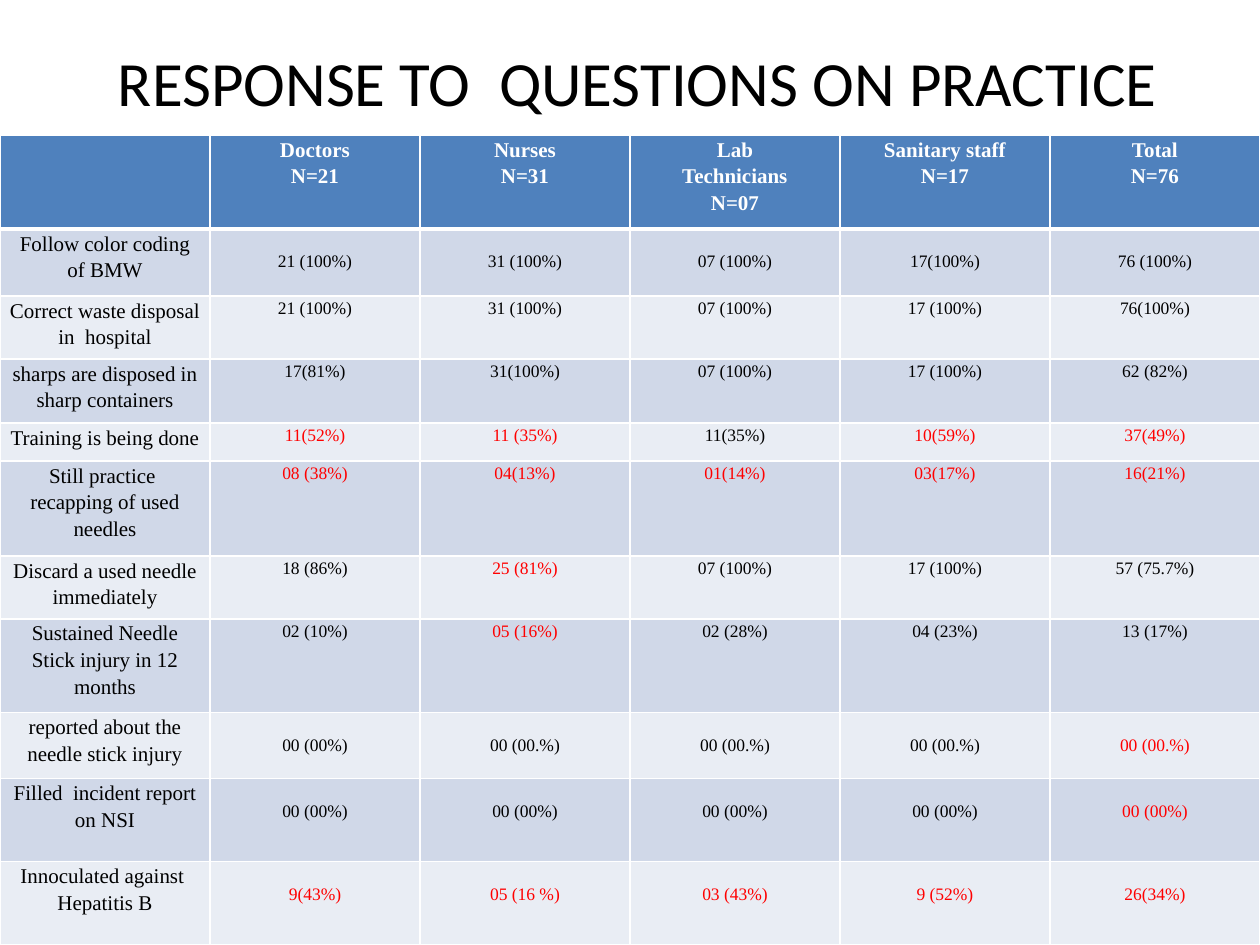
from lxml.etree import SubElement
from pptx import Presentation
from pptx.dml.color import RGBColor
from pptx.enum.text import MSO_ANCHOR, PP_ALIGN
from pptx.oxml.ns import qn
from pptx.util import Pt

PX = 914400 // 126
COLORS = {
    "header": "4F81BD",
    "odd": "D0D8E8",
    "even": "E9EDF4",
    "white": "FFFFFF",
    "black": "000000",
    "red": "FF0000",
}
SERIF = "Times New Roman"
TITLE = {"name": "Calibri", "size": Pt(36)}
HEADER = {"name": SERIF, "size": Pt(12), "bold": True}
QUESTION = {"name": SERIF, "size": Pt(12), "bold": False}
ANSWER = {"name": SERIF, "size": Pt(10), "bold": False}

COLUMN_WIDTH = 210
HEADER_HEIGHT = 94
LOWERED = 20  # top margin of answers that start one line down
GROUPS = ["", "Doctors\nN=21", "Nurses\nN=31", "Lab\nTechnicians\nN=07",
          "Sanitary staff\nN=17", "Total\nN=76"]
# height, top margin of answers, question, answers, columns with red answers
RESPONSES = [
    (67, LOWERED, "Follow color coding of BMW",
     ["21 (100%)", "31 (100%)", "07 (100%)", "17(100%)", "76 (100%)"], ()),
    (63, 0, "Correct waste disposal in  hospital",
     ["21 (100%)", "31 (100%)", "07 (100%)", "17 (100%)", "76(100%)"], ()),
    (64, 0, "sharps are disposed in sharp containers",
     ["17(81%)", "31(100%)", "07 (100%)", "17 (100%)", "62 (82%)"], ()),
    (38, 0, "Training is being done",
     ["11(52%)", "11 (35%)", "11(35%)", "10(59%)", "37(49%)"], (1, 2, 4, 5)),
    (95, 0, "Still practice  recapping of used needles",
     ["08 (38%)", "04(13%)", "01(14%)", "03(17%)", "16(21%)"], (1, 2, 3, 4, 5)),
    (63, 0, "Discard a used needle immediately",
     ["18 (86%)", "25 (81%)", "07 (100%)", "17 (100%)", "57 (75.7%)"], (2,)),
    (94, 0, "Sustained Needle Stick injury in 12 months",
     ["02 (10%)", "05 (16%)", "02 (28%)", "04 (23%)", "13 (17%)"], (2,)),
    (66, LOWERED, "reported about the needle stick injury",
     ["00 (00%)", "00 (00.%)", "00 (00.%)", "00 (00.%)", "00 (00.%)"], (5,)),
    (83, LOWERED, "Filled  incident report on NSI",
     ["00 (00%)"] * 5, (5,)),
    (83, LOWERED, "Innoculated against  Hepatitis B",
     ["9(43%)", "05 (16 %)", "03 (43%)", "9 (52%)", "26(34%)"], (1, 2, 3, 4, 5)),
]


def px(length):
    return length * PX


def rgb(color):
    return RGBColor.from_string(COLORS[color])


def write(frame, text, font, color, line_spacing=1.0):
    """Put each line of text in its own centred paragraph."""
    for index, line in enumerate(text.split("\n")):
        para = frame.add_paragraph() if index else frame.paragraphs[0]
        para.alignment = PP_ALIGN.CENTER
        para.line_spacing = line_spacing
        if not line:
            continue
        span = para.add_run()
        span.text = line
        for name, value in font.items():
            setattr(span.font, name, value)
        span.font.color.rgb = rgb(color)


def add_title(page, text):
    box = page.shapes.add_textbox(px(15), px(38), px(1245), px(87))
    frame = box.text_frame
    frame.word_wrap = True
    frame.vertical_anchor = MSO_ANCHOR.MIDDLE
    write(frame, text, TITLE, "black")


def add_borders(cell, widths):
    """Draw white borders; widths gives points by side tag."""
    properties = cell._tc.get_or_add_tcPr()
    for side, width in widths.items():
        line = SubElement(properties, qn(f"a:{side}"), w=str(Pt(width)))
        fill = SubElement(line, qn("a:solidFill"))
        SubElement(fill, qn("a:srgbClr"), val=COLORS["white"])


def fill_cell(cell, text, font, color, background, top=0, above=1, below=1):
    margins = {"margin_left": px(9), "margin_right": px(9),
               "margin_top": px(top), "margin_bottom": 0}
    for name, value in margins.items():
        setattr(cell, name, value)
    add_borders(cell, {"lnL": 1, "lnR": 1, "lnT": above, "lnB": below})
    cell.fill.solid()
    cell.fill.fore_color.rgb = rgb(background)
    write(cell.text_frame, text, font, color, 1.15)


def add_response_table(page):
    heights = [HEADER_HEIGHT] + [response[0] for response in RESPONSES]
    table = page.shapes.add_table(
        len(heights), len(GROUPS), 0, px(135),
        px(COLUMN_WIDTH * len(GROUPS)), px(sum(heights))).table
    for column in table.columns:
        column.width = px(COLUMN_WIDTH)
    for row, height in zip(table.rows, heights):
        row.height = px(height)

    for column, group in enumerate(GROUPS):
        fill_cell(table.cell(0, column), group, HEADER, "white", "header", below=3)
    for row, (_, top, question, answers, reds) in enumerate(RESPONSES, 1):
        background = "odd" if row % 2 else "even"
        above = 3 if row == 1 else 1
        fill_cell(table.cell(row, 0), question, QUESTION, "black", background,
                  above=above)
        for column, answer in enumerate(answers, 1):
            color = "red" if column in reds else "black"
            fill_cell(table.cell(row, column), answer, ANSWER, color, background,
                      top, above)


def main():
    deck = Presentation()
    deck.slide_width, deck.slide_height = px(1260), px(945)
    page = deck.slides.add_slide(deck.slide_layouts[6])
    add_title(page, "RESPONSE TO  QUESTIONS ON PRACTICE")
    add_response_table(page)
    deck.save("out.pptx")


if __name__ == "__main__":
    main()
